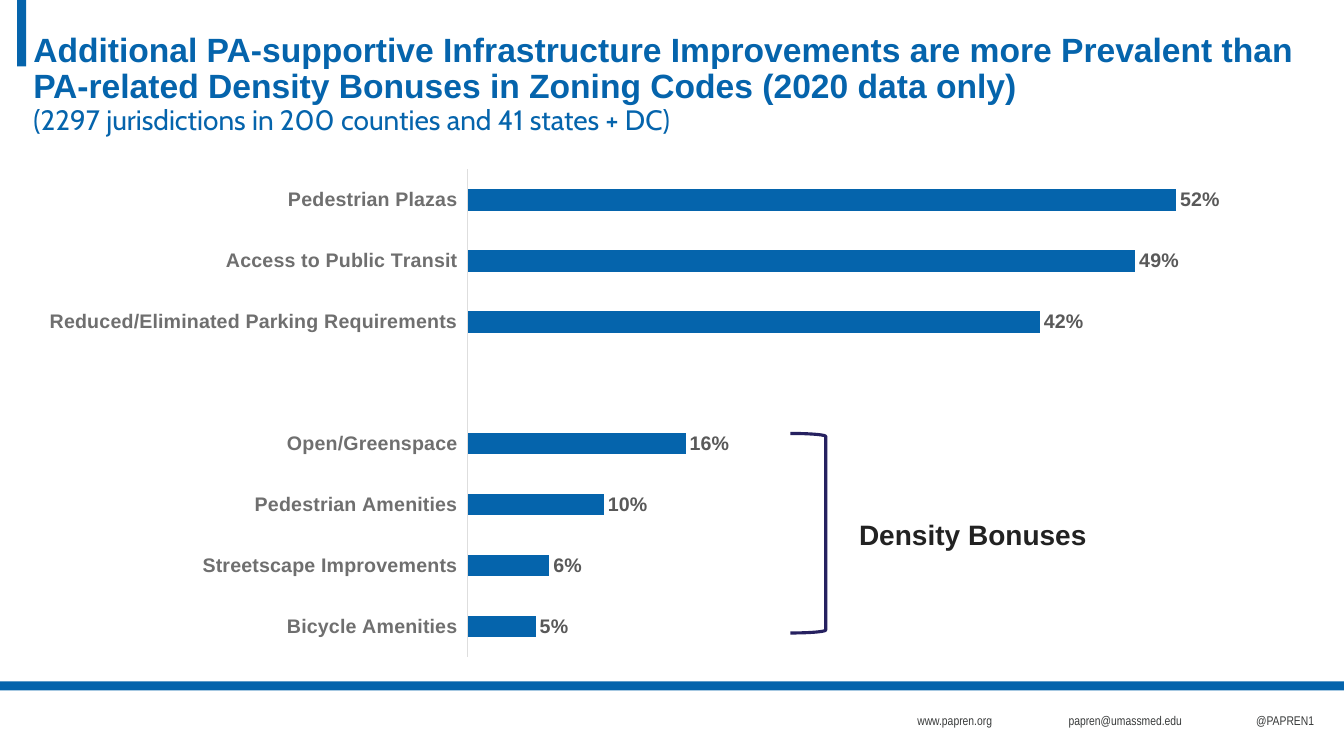
from dataclasses import dataclass

from pptx import Presentation
from pptx.chart.data import CategoryChartData
from pptx.dml.color import RGBColor
from pptx.enum.chart import XL_CHART_TYPE, XL_LABEL_POSITION, XL_TICK_LABEL_POSITION, XL_TICK_MARK
from pptx.enum.shapes import MSO_SHAPE
from pptx.enum.text import MSO_ANCHOR, MSO_AUTO_SIZE, PP_ALIGN
from pptx.oxml import parse_xml
from pptx.oxml.ns import nsdecls
from pptx.util import Emu, Pt

PX = 9144


@dataclass(frozen=True)
class Theme:
    """Colours, fonts and type sizes of the slide."""
    blue: str = "0564AC"
    navy: str = "262160"
    ink: str = "222222"
    contact: str = "383A3A"
    category: str = "6F6F6F"
    value: str = "595959"
    axis: str = "DEDEDE"
    sans: str = "Arial"
    narrow: str = "Arial Narrow"
    subtitle_font: str = "Cabin"
    title_size: int = 24
    heading_size: int = 20
    label_size: int = 14
    chart_size: int = 10
    contact_size: int = 9


THEME = Theme()

SHARES = {
    "Bicycle Amenities": 0.05,
    "Streetscape Improvements": 0.06,
    "Pedestrian Amenities": 0.10,
    "Open/Greenspace": 0.16,
    "": None,
    "Reduced/Eliminated Parking Requirements": 0.42,
    "Access to Public Transit": 0.49,
    "Pedestrian Plazas": 0.52,
}

CONTACTS = [
    ("www.papren.org", 900, 96),
    ("papren@umassmed.edu", 1050, 134),
    ("@PAPREN1", 1236, 79),
]


def px(*lengths):
    """Turn pixel lengths into EMU."""
    return [Emu(length * PX) for length in lengths]


def style_font(font, size, color, name=THEME.sans, bold=False):
    """Set the size, colour, typeface and weight of a font."""
    font.size = Pt(size)
    font.name = name
    font.bold = bold
    font.color.rgb = RGBColor.from_string(color)


def add_run(paragraph, text, **style):
    """Append a formatted run to a paragraph."""
    run = paragraph.add_run()
    run.text = text
    style_font(run.font, **style)


def clear_margins(frame):
    """Remove all insets of a text frame."""
    frame.margin_left = frame.margin_top = frame.margin_right = frame.margin_bottom = 0


def add_text(slide, text, box, line_spacing=None, inset=True, **style):
    """Add a one-line text box that does not wrap."""
    frame = slide.shapes.add_textbox(*px(*box)).text_frame
    frame.word_wrap = False
    if not inset:
        clear_margins(frame)
    paragraph = frame.paragraphs[0]
    paragraph.line_spacing = line_spacing
    add_run(paragraph, text, **style)


def add_bar(slide, box):
    """Add a solid blue rectangle."""
    bar = slide.shapes.add_shape(MSO_SHAPE.RECTANGLE, *px(*box))
    bar.shadow.inherit = False
    bar.fill.solid()
    bar.fill.fore_color.rgb = RGBColor.from_string(THEME.blue)
    bar.line.fill.background()


def add_bracket(slide, box):
    """Add the bracket that groups the density bonuses."""
    bracket = slide.shapes.add_shape(MSO_SHAPE.RIGHT_BRACKET, *px(*box))
    bracket.shadow.inherit = False
    bracket.fill.background()
    bracket.line.color.rgb = RGBColor.from_string(THEME.navy)
    bracket.line.width = Pt(2.25)


def set_title(slide, heading, subtitle, box):
    """Place the title and write its heading and subtitle."""
    title = slide.shapes.title
    title.left, title.top, title.width, title.height = px(*box)
    frame = title.text_frame
    clear_margins(frame)
    frame.word_wrap = True
    frame.auto_size = MSO_AUTO_SIZE.NONE
    frame.vertical_anchor = MSO_ANCHOR.TOP
    paragraph = frame.paragraphs[0]
    paragraph.alignment = PP_ALIGN.LEFT
    paragraph.line_spacing = 0.9
    add_run(paragraph, heading, size=THEME.title_size, color=THEME.blue, bold=True)
    paragraph.add_line_break()
    add_run(paragraph, subtitle, size=THEME.heading_size, color=THEME.blue, name=THEME.subtitle_font)


def set_plot_area(chart, x, y, w, h):
    """Fix the inner plot area as fractions of the chart."""
    plot_area = chart.plots[0]._element.getparent()
    for layout in plot_area.findall("{*}layout"):
        plot_area.remove(layout)
    sizes = "".join(f'<c:{key} val="{value}"/>' for key, value in zip("xywh", (x, y, w, h)))
    plot_area.insert(0, parse_xml(
        f'<c:layout {nsdecls("c")}><c:manualLayout><c:layoutTarget val="inner"/>'
        f'<c:xMode val="edge"/><c:yMode val="edge"/>{sizes}</c:manualLayout></c:layout>'))


def add_share_chart(slide, shares, box):
    """Add the bar chart of the share of jurisdictions."""
    data = CategoryChartData(number_format="0%")
    data.categories = list(shares)
    data.add_series("Series 1", list(shares.values()))
    chart = slide.shapes.add_chart(XL_CHART_TYPE.BAR_CLUSTERED, *px(*box), data).chart
    chart.has_legend = False
    chart.has_title = False
    style_font(chart.font, THEME.chart_size, THEME.ink)
    set_plot_area(chart, 0.34, 0.02, 0.64, 0.96)

    value_axis = chart.value_axis
    value_axis.minimum_scale, value_axis.maximum_scale = 0, 0.6
    value_axis.has_major_gridlines = False
    value_axis.visible = False

    category_axis = chart.category_axis
    category_axis.major_tick_mark = XL_TICK_MARK.NONE
    category_axis.tick_label_position = XL_TICK_LABEL_POSITION.LOW
    category_axis.format.line.color.rgb = RGBColor.from_string(THEME.axis)
    category_axis.format.line.width = Pt(0.75)
    style_font(category_axis.tick_labels.font, THEME.label_size, THEME.category, bold=True)

    plot = chart.plots[0]
    plot.gap_width = 182
    plot.vary_by_categories = False
    fill = plot.series[0].format.fill
    fill.solid()
    fill.fore_color.rgb = RGBColor.from_string(THEME.blue)
    labels = plot.series[0].data_labels
    labels.show_value = True
    labels.position = XL_LABEL_POSITION.OUTSIDE_END
    labels.number_format = "0%"
    labels.number_format_is_linked = False
    style_font(labels.font, THEME.label_size, THEME.value, bold=True)


def main():
    """Build and save the slide."""
    presentation = Presentation()
    presentation.slide_width, presentation.slide_height = px(1333, 750)
    slide = presentation.slides.add_slide(presentation.slide_layouts[5])
    add_bar(slide, (0, 676, 1333, 9))
    for text, left, width in CONTACTS:
        add_text(slide, text, (left, 702, width, 25),
                 size=THEME.contact_size, color=THEME.contact, name=THEME.narrow)
    add_bar(slide, (17, 0, 9, 66))
    set_title(
        slide,
        "Additional PA-supportive Infrastructure Improvements are more Prevalent than "
        "PA-related Density Bonuses in Zoning Codes (2020 data only)",
        "(2297 jurisdictions in 200 counties and 41 states + DC)",
        (33, 33, 1267, 42))
    add_share_chart(slide, SHARES, (33, 158, 1267, 504))
    add_bracket(slide, (784, 430, 35, 198))
    add_text(slide, "Density Bonuses", (852, 507, 247, 45), line_spacing=1.2, inset=False,
             size=THEME.heading_size, color=THEME.ink, bold=True)
    presentation.save("out.pptx")


if __name__ == "__main__":
    main()
